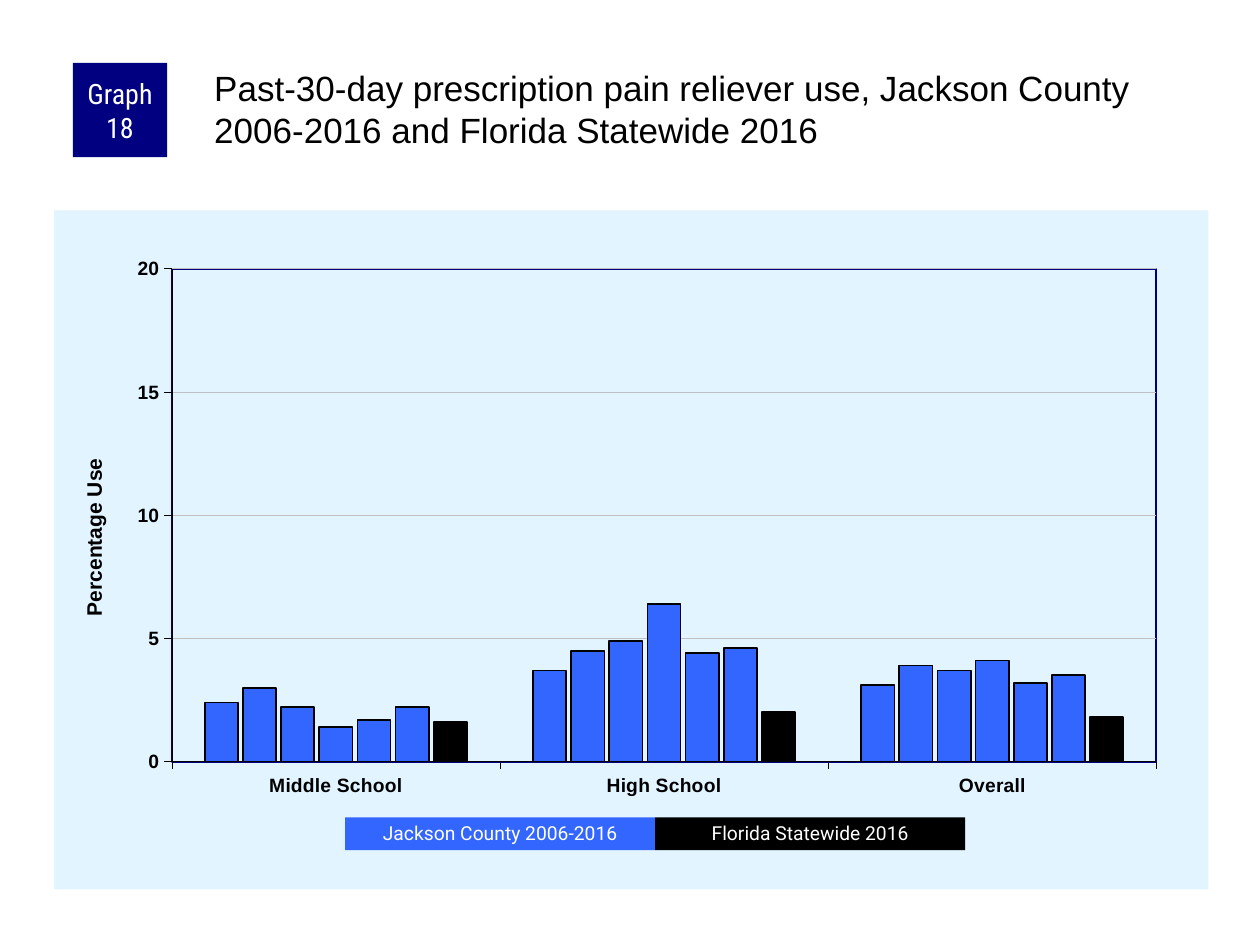
from dataclasses import dataclass

import lxml.etree
import pptx
import pptx.chart.axis
import pptx.chart.chart
import pptx.chart.data
import pptx.dml.color
import pptx.dml.fill
import pptx.enum.chart
import pptx.enum.shapes
import pptx.enum.text
import pptx.oxml
import pptx.oxml.ns
import pptx.slide
import pptx.text.text
import pptx.util
from pptx.util import Cm

COLOURS = {
    "black": "000000",
    "white": "FFFFFF",
    "navy": "000080",
    "county": "3366FF",
    "panel": "E1F4FF",
    "grid": "C0C0C0",
}
SCHOOLS = ["Middle School", "High School", "Overall"]
COUNTY_USE = [
    (2.4, 3.7, 3.1),
    (3.0, 4.5, 3.9),
    (2.2, 4.9, 3.7),
    (1.4, 6.4, 4.1),
    (1.7, 4.4, 3.2),
    (2.2, 4.6, 3.5),
]
STATE_USE = (1.6, 2.0, 1.8)


@dataclass
class Label:
    text: str
    left: float
    top: float
    width: float
    height: float
    fill: str
    font: str
    size: int
    side_margin: float = 0.25
    end_margin: float = 0.13
    line_spacing: float = 1.0


LEGEND_LEFT, LEGEND_WIDTH = 6.96, 6.25
LEGEND = [
    Label(text, LEGEND_LEFT + i * LEGEND_WIDTH, 16.48, LEGEND_WIDTH, 0.66,
          fill, "Roboto", 11, line_spacing=0.9)
    for i, (text, fill) in enumerate([
        ("Jackson County 2006-2016", "county"),
        ("Florida Statewide 2016", "black"),
    ])
]
BADGE = Label("Graph 18", 1.47, 1.27, 1.9, 1.9, "navy", "Roboto Condensed", 16,
              side_margin=0.13, end_margin=0)


def rgb(name: str) -> pptx.dml.color.RGBColor:
    return pptx.dml.color.RGBColor.from_string(COLOURS[name])


def paint(fill: pptx.dml.fill.FillFormat, colour: str) -> None:
    fill.solid()
    fill.fore_color.rgb = rgb(colour)


def style_font(font: pptx.text.text.Font, name: str, size: float, colour: str,
               bold: bool = False) -> None:
    font.name = name
    font.size = pptx.util.Pt(size)
    font.bold = bold
    font.color.rgb = rgb(colour)


def add_label(slide: pptx.slide.Slide, label: Label) -> None:
    box = slide.shapes.add_shape(
        pptx.enum.shapes.MSO_SHAPE.RECTANGLE,
        Cm(label.left), Cm(label.top), Cm(label.width), Cm(label.height))
    box.shadow.inherit = False
    paint(box.fill, label.fill)
    box.line.fill.background()
    frame = box.text_frame
    frame.word_wrap = True
    frame.vertical_anchor = pptx.enum.text.MSO_ANCHOR.MIDDLE
    frame.margin_left = frame.margin_right = Cm(label.side_margin)
    frame.margin_top = frame.margin_bottom = Cm(label.end_margin)
    frame.text = label.text
    paragraph = frame.paragraphs[0]
    paragraph.alignment = pptx.enum.text.PP_ALIGN.CENTER
    paragraph.line_spacing = label.line_spacing
    style_font(paragraph.font, label.font, label.size, "white")


def add_heading(slide: pptx.slide.Slide) -> None:
    heading = slide.shapes.add_textbox(Cm(4.24), Cm(1.27), Cm(20.12), Cm(2.11))
    frame = heading.text_frame
    frame.word_wrap = True
    frame.margin_left = frame.margin_top = Cm(0.08)
    frame.margin_right = frame.margin_bottom = 0
    frame.text = ("Past-30-day prescription pain reliever use, Jackson County "
                  "2006-2016 and Florida Statewide 2016")
    style_font(frame.paragraphs[0].font, "Arial", 20, "black")


def chart_xml(content: str) -> lxml.etree._Element:
    namespaces = pptx.oxml.ns.nsdecls("c", "a")
    tag, rest = content.split(">", 1)
    return pptx.oxml.parse_xml(f"{tag} {namespaces}>{rest}")


def set_layout(parent: lxml.etree._Element, index: int, **places: float) -> None:
    """Place a chart part by fractions of the chart, replacing its old layout."""
    for old in parent.findall(pptx.oxml.ns.qn("c:layout")):
        parent.remove(old)
    target = '<c:layoutTarget val="inner"/>' if "w" in places else ""
    modes = '<c:xMode val="edge"/><c:yMode val="edge"/>'
    values = "".join(f'<c:{key} val="{value}"/>' for key, value in places.items())
    parent.insert(index, chart_xml(
        f"<c:layout><c:manualLayout>{target}{modes}{values}"
        "</c:manualLayout></c:layout>"))


def style_axis(axis: pptx.chart.axis.CategoryAxis | pptx.chart.axis.ValueAxis) -> None:
    axis.major_tick_mark = pptx.enum.chart.XL_TICK_MARK.OUTSIDE
    axis.minor_tick_mark = pptx.enum.chart.XL_TICK_MARK.NONE
    style_font(axis.tick_labels.font, "Arial", 11, "black", bold=True)
    axis.format.line.color.rgb = rgb("black")
    axis.format.line.width = pptx.util.Pt(0.25)


def style_value_axis(axis: pptx.chart.axis.ValueAxis) -> None:
    style_axis(axis)
    axis.minimum_scale, axis.maximum_scale, axis.major_unit = 0, 20, 5
    axis.tick_labels.number_format = "0"
    axis.tick_labels.number_format_is_linked = False
    axis.has_major_gridlines = True
    axis.major_gridlines.format.line.color.rgb = rgb("grid")
    axis.major_gridlines.format.line.width = pptx.util.Pt(0.25)
    title = axis.axis_title
    title.text_frame.text = "Percentage Use"
    style_font(title.text_frame.paragraphs[0].font, "Arial", 12, "black", bold=True)
    for body in title.element.iter(pptx.oxml.ns.qn("a:bodyPr")):
        body.set("rot", "-5400000")
        body.set("vert", "horz")
    set_layout(title.element, 1, x=0.02, y=0.36)


def style_backgrounds(chart: pptx.chart.chart.Chart) -> None:
    """Fill the chart panel and draw the navy frame of the plot."""
    chart_part = chart.element.find(pptx.oxml.ns.qn("c:chart"))
    plot_area = chart_part.find(pptx.oxml.ns.qn("c:plotArea"))
    chart_part.addnext(chart_xml(
        f'<c:spPr><a:solidFill><a:srgbClr val="{COLOURS["panel"]}"/></a:solidFill>'
        "<a:ln><a:noFill/></a:ln></c:spPr>"))
    set_layout(plot_area, 0, x=0.102, y=0.086, w=0.853, h=0.726)
    plot_area.append(chart_xml(
        f'<c:spPr><a:noFill/><a:ln w="{pptx.util.Pt(1)}"><a:solidFill>'
        f'<a:srgbClr val="{COLOURS["navy"]}"/></a:solidFill></a:ln></c:spPr>'))


def add_use_chart(slide: pptx.slide.Slide) -> None:
    use = pptx.chart.data.CategoryChartData(number_format="0.0")
    use.categories = SCHOOLS
    for number, values in enumerate([*COUNTY_USE, STATE_USE], start=1):
        use.add_series(f"Series {number}", values)
    chart = slide.shapes.add_chart(
        pptx.enum.chart.XL_CHART_TYPE.COLUMN_CLUSTERED,
        Cm(1.09), Cm(4.24), Cm(23.27), Cm(13.69), use).chart
    chart.has_legend = False
    chart.has_title = False
    style_font(chart.font, "Arial", 8, "black")
    columns = chart.plots[0]
    columns.gap_width, columns.overlap = 200, -15
    columns.vary_by_categories = False
    for index, series in enumerate(columns.series):
        paint(series.format.fill, "county" if index < len(COUNTY_USE) else "black")
        series.format.line.color.rgb = rgb("black")
        series.format.line.width = pptx.util.Pt(1)
    style_axis(chart.category_axis)
    style_value_axis(chart.value_axis)
    style_backgrounds(chart)


def main() -> None:
    deck = pptx.Presentation()
    deck.slide_width, deck.slide_height = Cm(25.4), Cm(19.05)
    slide = deck.slides.add_slide(deck.slide_layouts[6])
    add_use_chart(slide)
    add_label(slide, BADGE)
    add_heading(slide)
    for entry in LEGEND:
        add_label(slide, entry)
    deck.save("out.pptx")


if __name__ == "__main__":
    main()
